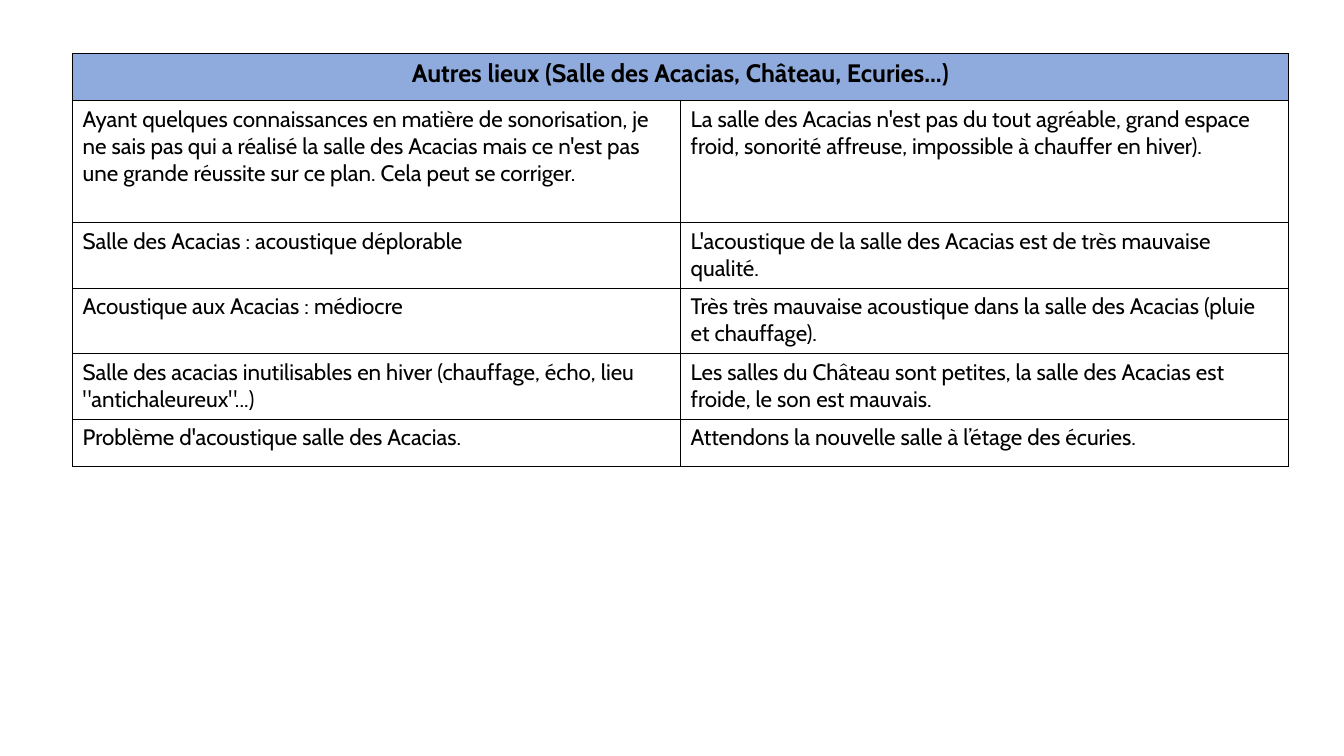
"""Build a slide with a table of remarks about the other venues."""
import pptx
import pptx.dml.color
import pptx.enum.text
import pptx.oxml
import pptx.oxml.ns
import pptx.util

HEADING = "Autres lieux (Salle des Acacias, Château, Ecuries...)"
REMARKS = [
    ("Ayant quelques connaissances en matière de sonorisation, je ne sais pas qui a réalisé "
     "la salle des Acacias mais ce n'est pas une grande réussite sur ce plan. "
     "Cela peut se corriger.",
     "La salle des Acacias n'est pas du tout agréable, grand espace froid, sonorité affreuse, "
     "impossible à chauffer en hiver)."),
    ("Salle des Acacias : acoustique déplorable",
     "L'acoustique de la salle des Acacias est de très mauvaise qualité."),
    ("Acoustique aux Acacias : médiocre",
     "Très très mauvaise acoustique dans la salle des Acacias (pluie et chauffage)."),
    ("Salle des acacias inutilisables en hiver (chauffage, écho, lieu \"antichaleureux\"...)",
     "Les salles du Château sont petites, la salle des Acacias est froide, le son est mauvais."),
    ("Problème d'acoustique salle des Acacias.",
     "Attendons la nouvelle salle à l’étage des écuries."),
]
COLORS = {"heading": "8FAADC", "text": "000000", "border": "000000"}
HEADING_FONT = {"name": "Cabin", "size": pptx.util.Pt(18), "bold": True}
REMARK_FONT = {"name": "Cabin", "size": pptx.util.Pt(16), "bold": False}
LEFT, TOP, COLUMN = 0.72, 0.53, 6.03
ROWS = [0.47, 1.21, 0.65, 0.65, 0.65, 0.47]


def add_borders(cell):
    tcPr = cell._tc.get_or_add_tcPr()
    for side in ("lnL", "lnR", "lnT", "lnB"):
        tcPr.append(pptx.oxml.parse_xml(
            f'<a:{side} {pptx.oxml.ns.nsdecls("a")} w="{pptx.util.Pt(1)}"><a:solidFill>'
            f'<a:srgbClr val="{COLORS["border"]}"/></a:solidFill></a:{side}>'))


def write(cell, text, font):
    p = cell.text_frame.paragraphs[0]
    r = p.add_run()
    r.text = text
    for name, value in font.items():
        setattr(r.font, name, value)
    r.font.color.rgb = pptx.dml.color.RGBColor.from_string(COLORS["text"])
    return p


def main():
    prs = pptx.Presentation()
    prs.slide_width = pptx.util.Inches(13.33)
    prs.slide_height = pptx.util.Inches(7.5)
    s = prs.slides.add_slide(prs.slide_layouts[6])
    box = [pptx.util.Inches(v) for v in (LEFT, TOP, 2 * COLUMN, sum(ROWS))]
    table = s.shapes.add_table(len(ROWS), 2, *box).table
    table.first_row = table.horz_banding = False
    for column in table.columns:
        column.width = pptx.util.Inches(COLUMN)
    for row, height in zip(table.rows, ROWS):
        row.height = pptx.util.Inches(height)
    for cell in table.iter_cells():
        add_borders(cell)
        cell.fill.background()

    heading = table.cell(0, 0)
    heading.merge(table.cell(0, 1))
    heading.fill.solid()
    heading.fill.fore_color.rgb = pptx.dml.color.RGBColor.from_string(COLORS["heading"])
    write(heading, HEADING, HEADING_FONT).alignment = pptx.enum.text.PP_ALIGN.CENTER
    for i, pair in enumerate(REMARKS, 1):
        for j, remark in enumerate(pair):
            write(table.cell(i, j), remark, REMARK_FONT)
    prs.save("out.pptx")


if __name__ == "__main__":
    main()
